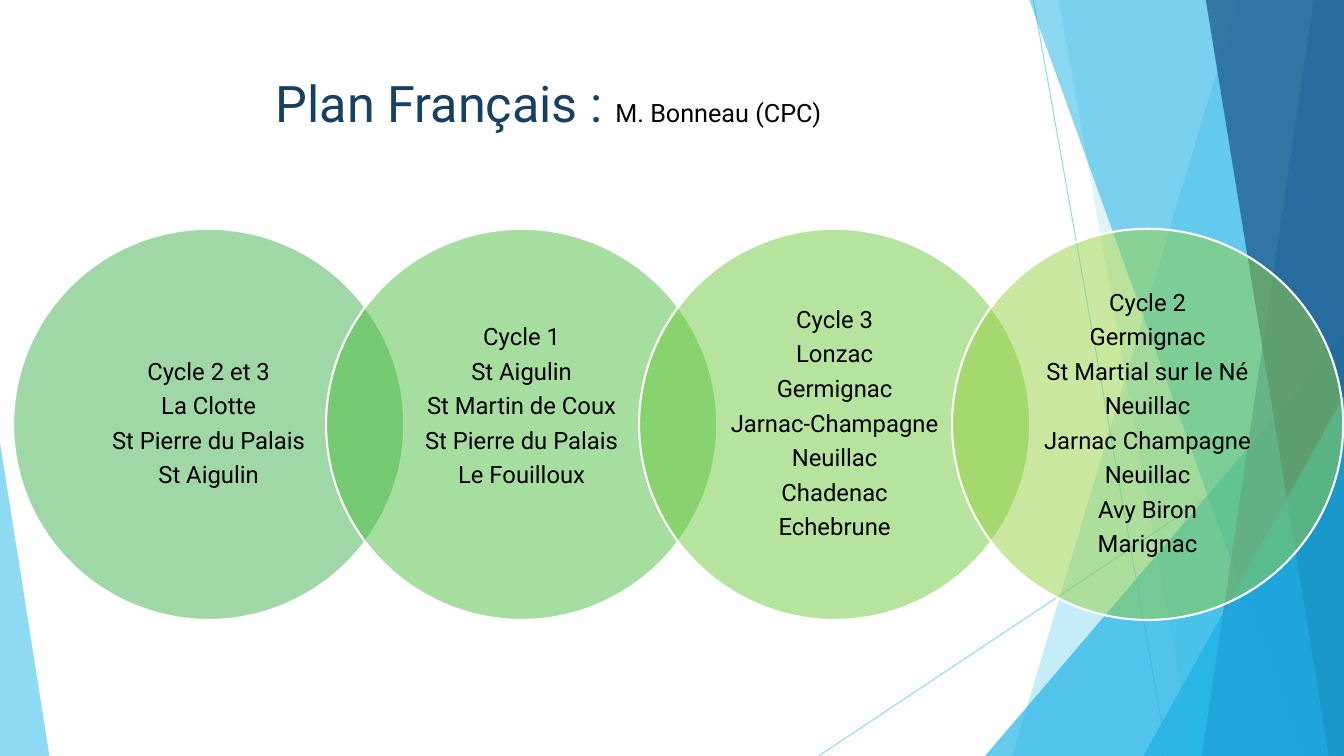
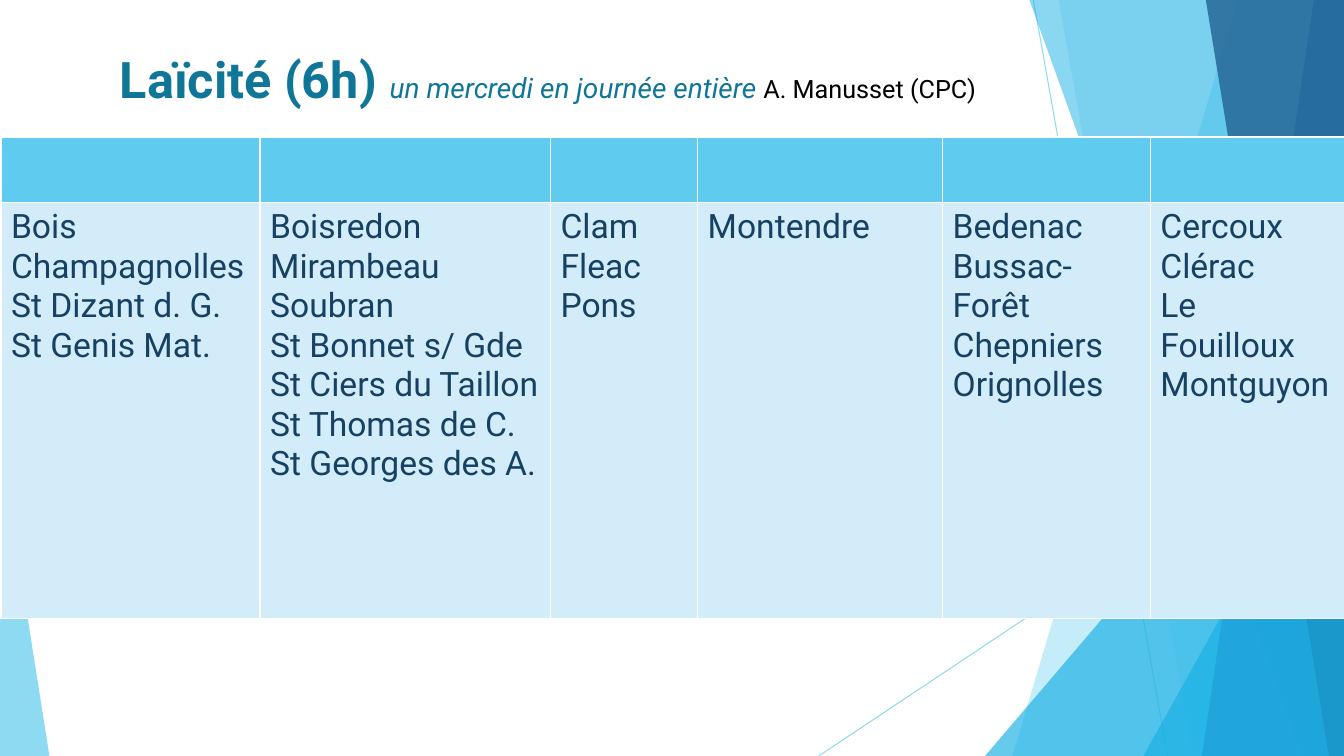
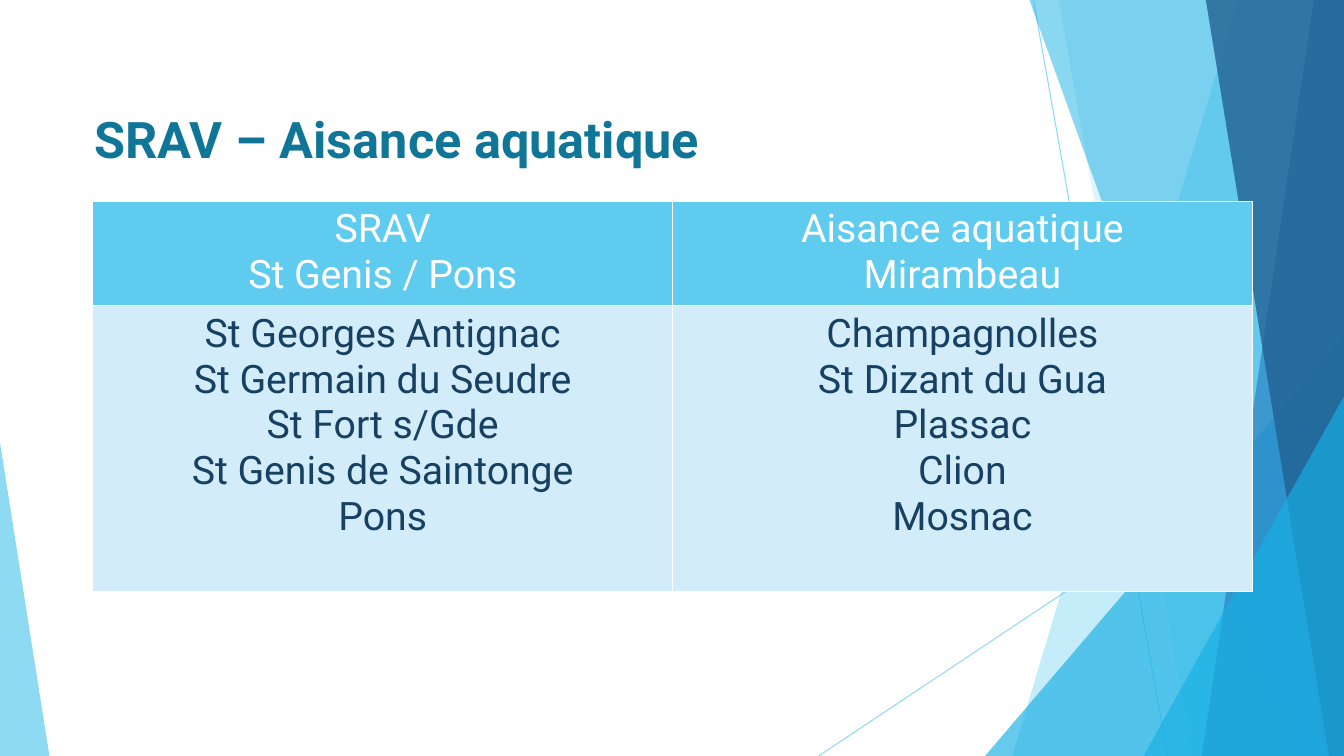
from dataclasses import dataclass

from lxml.etree import SubElement
from pptx import Presentation
from pptx.dml.color import RGBColor
from pptx.enum.shapes import MSO_CONNECTOR, MSO_SHAPE
from pptx.enum.text import MSO_ANCHOR, PP_ALIGN
from pptx.oxml.ns import qn
from pptx.util import Inches, Pt


@dataclass(frozen=True)
class Theme:
    font: str = "Roboto"
    width: float = 13.33
    height: float = 7.5
    # Colours
    white: str = "FFFFFF"
    black: str = "000000"
    navy: str = "174162"
    teal: str = "0F7698"
    sky: str = "5FCBEF"
    cyan: str = "17B0E4"
    blue: str = "2E83C3"
    deep: str = "226292"
    pale: str = "D2ECF9"
    # Type sizes
    title: float = 36
    subtitle: float = 20
    author: float = 18
    circle: float = 17


T = Theme()


# Formatting helpers
def set_alpha(sp, percent):
    for clr in sp._element.spPr.iter(qn("a:srgbClr")):
        SubElement(clr, qn("a:alpha"), val=str(percent * 1000))


def fill_shape(sp, color, alpha):
    sp.shadow.inherit = False
    sp.fill.solid()
    sp.fill.fore_color.rgb = RGBColor.from_string(color)
    set_alpha(sp, alpha)
    sp.line.fill.background()


def add_run(p, text, size, color, bold=False, italic=False):
    r = p.add_run()
    r.text = text
    r.font.name, r.font.size = T.font, Pt(size)
    r.font.bold, r.font.italic = bold, italic
    r.font.color.rgb = RGBColor.from_string(color)


def write_lines(tf, lines, size, color, align=PP_ALIGN.LEFT, spacing=None, after=0):
    for i, line in enumerate(lines):
        p = tf.add_paragraph() if i else tf.paragraphs[0]
        p.alignment = align
        p.line_spacing = spacing
        p.space_after = Pt(after)
        add_run(p, line, size, color)


# Backdrop elements
def add_ray(s, x1, y1, x2, y2):
    ray = s.shapes.add_connector(MSO_CONNECTOR.STRAIGHT, Inches(x1), Inches(y1),
                                 Inches(x2), Inches(y2))
    ray.line.color.rgb = RGBColor.from_string(T.sky)
    ray.line.width = Pt(0.75)
    set_alpha(ray, 70)
    SubElement(ray._element.spPr, qn("a:effectLst"))


def add_band(s, top_x, bottom_x, color, alpha):
    """Full-height band between a slanted left side and the right slide edge."""
    fb = s.shapes.build_freeform(Inches(top_x), 0)
    fb.add_line_segments([(Inches(T.width), 0),
                          (Inches(T.width), Inches(T.height)),
                          (Inches(bottom_x), Inches(T.height))], close=True)
    fill_shape(fb.convert_to_shape(), color, alpha)


def add_corner(s, left, right, top, apex, color, alpha):
    """Triangle standing on the bottom edge; apex is 0 (left) or 1 (right)."""
    sp = s.shapes.add_shape(MSO_SHAPE.ISOSCELES_TRIANGLE, Inches(left), Inches(top),
                            Inches(right - left), Inches(T.height - top))
    sp.adjustments[0] = apex
    fill_shape(sp, color, alpha)


def add_backdrop(s):
    add_ray(s, 10.25, 0, 11.58, T.height)
    add_ray(s, T.width, 4.03, 8.12, T.height)
    add_band(s, 12.28, 10.04, T.sky, 36)
    add_band(s, 10.5, 11.83, T.sky, 20)
    add_corner(s, 9.77, T.width, 3.33, 1, T.cyan, 66)
    add_band(s, 10.21, 12.91, T.cyan, 50)
    add_band(s, 13.03, 11.92, T.blue, 70)
    add_band(s, 11.96, 13.18, T.deep, 80)
    add_corner(s, 11.34, T.width, 3.93, 1, T.cyan, 66)
    add_corner(s, 0, 0.49, 4.39, 0, T.sky, 70)


# Content elements
def add_title(s, left, top, runs, align=PP_ALIGN.LEFT):
    """Each run is a (text, size, colour, format) tuple."""
    tf = s.shapes.add_textbox(Inches(left), Inches(top), Inches(9.4), Inches(0.72)).text_frame
    tf.word_wrap = True
    p = tf.paragraphs[0]
    p.alignment = align
    for text, size, color, style in runs:
        add_run(p, text, size, color, **style)


def add_circle(s, left, top, diameter, color, lines, bottom_inset):
    sp = s.shapes.add_shape(MSO_SHAPE.OVAL, Inches(left), Inches(top),
                            Inches(diameter), Inches(diameter))
    fill_shape(sp, color, 50)
    sp.line.color.rgb = RGBColor.from_string(T.white)
    sp.line.width = Pt(1.5)
    tf = sp.text_frame
    tf.word_wrap = True
    tf.vertical_anchor = MSO_ANCHOR.MIDDLE
    tf.margin_left = tf.margin_right = Inches(0.21)
    tf.margin_top, tf.margin_bottom = Inches(0.02), Inches(bottom_inset)
    write_lines(tf, lines, T.circle, T.black, PP_ALIGN.CENTER, spacing=0.9, after=6.3)


def add_borders(cell):
    tc_pr = cell._tc.get_or_add_tcPr()
    for side in ("lnL", "lnR", "lnT", "lnB"):
        ln = SubElement(tc_pr, qn(f"a:{side}"), w=str(Pt(1)))
        SubElement(SubElement(ln, qn("a:solidFill")), qn("a:srgbClr"), val=T.white)


def add_grid(s, left, top, widths, heights, rows, size, align=PP_ALIGN.LEFT):
    """Table with a header row; each cell is a list of lines."""
    table = s.shapes.add_table(len(rows), len(widths), Inches(left), Inches(top),
                               Inches(sum(widths)), Inches(sum(heights))).table
    table.first_row = table.horz_banding = False
    for column, width in zip(table.columns, widths):
        column.width = Inches(width)
    for i, (height, row) in enumerate(zip(heights, rows)):
        table.rows[i].height = Inches(height)
        fill, color = (T.pale, T.navy) if i else (T.sky, T.white)
        for j, lines in enumerate(row):
            cell = table.cell(i, j)
            add_borders(cell)
            cell.fill.solid()
            cell.fill.fore_color.rgb = RGBColor.from_string(fill)
            write_lines(cell.text_frame, lines, size, color, align)


# Slides
def french_plan(s):
    add_title(s, 0.74, 0.67, [("Plan Français : ", T.title, T.navy, {}),
                              ("M. Bonneau (CPC)", T.author, T.black, {})],
              PP_ALIGN.CENTER)
    diameter = 3.88
    circles = [
        ("42B051", 0.02, ["Cycle 2 et 3", "La Clotte", "St Pierre du Palais", "St Aigulin"]),
        ("4CBE3E", 0.36, ["Cycle 1", "St Aigulin", "St Martin de Coux",
                          "St Pierre du Palais", "Le Fouilloux"]),
        ("6FC93F", 0.02, ["Cycle 3", "Lonzac", "Germignac", "Jarnac-Champagne",
                          "Neuillac", "Chadenac", "Echebrune"]),
        ("96D141", 0.02, ["Cycle 2", "Germignac", "St Martial sur le Né", "Neuillac",
                          "Jarnac Champagne", "Neuillac", "Avy Biron", "Marignac"]),
    ]
    # Neighbouring circles overlap by a fifth of their diameter
    for i, (color, bottom_inset, lines) in enumerate(circles):
        add_circle(s, 0.13 + i * 0.8 * diameter, 2.27, diameter, color, lines, bottom_inset)


def secularism(s):
    add_title(s, 1.09, 0.43, [
        ("Laïcité (6h) ", T.title, T.teal, {"bold": True}),
        ("un mercredi en journée entière ", T.subtitle, T.teal, {"italic": True}),
        ("A. Manusset (CPC)", T.author, T.black, {}),
    ])
    towns = [
        ["Bois", "Champagnolles", "St Dizant d. G.", "St Genis Mat."],
        ["Boisredon", "Mirambeau", "Soubran", "St Bonnet s/ Gde",
         "St Ciers du Taillon", "St Thomas de C.", "St Georges des A."],
        ["Clam", "Fleac", "Pons"],
        ["Montendre"],
        ["Bedenac", "Bussac-Forêt", "Chepniers", "Orignolles"],
        ["Cercoux", "Clérac", "Le Fouilloux", "Montguyon"],
    ]
    add_grid(s, 0.01, 1.36, [2.57, 2.88, 1.46, 2.43, 2.06, 1.94], [0.65, 4.13],
             [[[]] * len(towns), towns], 24)


def cycling_and_swimming(s):
    add_title(s, 0.84, 1.02, [("SRAV – Aisance aquatique", T.title, T.teal, {"bold": True})])
    headers = [["SRAV", "St Genis / Pons"], ["Aisance aquatique", "Mirambeau"]]
    towns = [
        ["St Georges Antignac", "St Germain du Seudre", "St Fort s/Gde",
         "St Genis de Saintonge", "Pons"],
        ["Champagnolles", "St Dizant du Gua", "Plassac", "Clion", "Mosnac"],
    ]
    add_grid(s, 0.92, 2, [5.75, 5.75], [1.01, 2.83], [headers, towns], 28, PP_ALIGN.CENTER)


def main():
    prs = Presentation()
    prs.slide_width, prs.slide_height = Inches(T.width), Inches(T.height)
    for build in (french_plan, secularism, cycling_and_swimming):
        s = prs.slides.add_slide(prs.slide_layouts[6])
        add_backdrop(s)
        build(s)
    prs.save("out.pptx")


if __name__ == "__main__":
    main()
